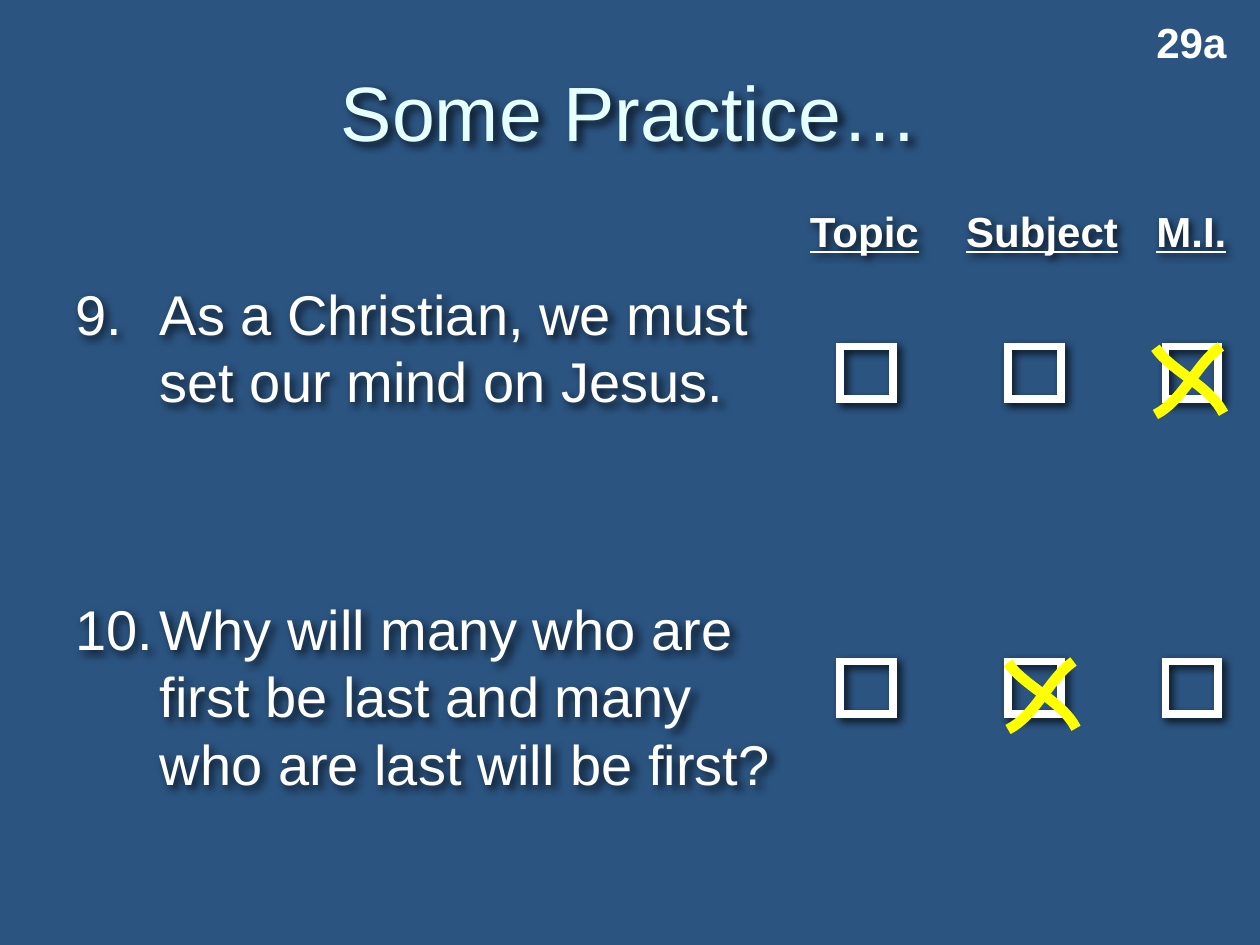
"""Build the "Some Practice…" slide with two questions and their checkboxes."""
from lxml.etree import SubElement
from pptx import Presentation
from pptx.dml.color import RGBColor
from pptx.enum.shapes import MSO_SHAPE
from pptx.enum.text import MSO_ANCHOR, PP_ALIGN
from pptx.oxml.ns import qn
from pptx.util import Inches, Pt

COLORS = {"bg": "2B5481", "title": "E5FFFF", "white": "FFFFFF", "mark": "FFFF00", "shadow": "000000"}
HEADINGS = [("Topic", 6.33, 1.58, 1.15), ("Subject", 7.57, 1.58, 1.48),
            ("M.I.", 9.08, 1.58, 0.8), ("29a", 9.08, 0.08, 0.8)]
QUESTIONS = [
    ("9.\tAs a Christian, we must set our mind on Jesus.", 2.17, 5.67, 2.75, 9.17),
    ("10.\tWhy will many who are first be last and many who are last will be first?", 4.67, 5.92, 5.25, 8),
]
BOX_LEFTS = [6.67, 8, 9.25]
STROKES = [[(0, 0), (0.13, 0.19), (0.43, 0.3), (0.54, 0.52)],
           [(0.52, -0.01), (0.33, 0.12), (0.22, 0.42), (0, 0.53)]]


def add_shadow(sp):
    sp.fill.background()
    sp.shadow.inherit = False
    effects = sp._element.spPr.find(qn("a:effectLst"))
    shadow = SubElement(effects, qn("a:outerShdw"), blurRad=str(Pt(5)), dist=str(Pt(2.8)),
                        dir="2700000", algn="tl", rotWithShape="0")
    color = SubElement(shadow, qn("a:srgbClr"), val=COLORS["shadow"])
    SubElement(color, qn("a:alpha"), val="75000")


def format_run(r, size, color):
    r.font.size = Pt(size)
    r.font.color.rgb = RGBColor.from_string(COLORS[color])
    r.font.name = "Arial"


prs = Presentation()
prs.slide_width, prs.slide_height = Inches(10), Inches(7.5)
s = prs.slides.add_slide(prs.slide_layouts[5])
s.background.fill.solid()
s.background.fill.fore_color.rgb = RGBColor.from_string(COLORS["bg"])

title = s.shapes.title
title.left, title.top, title.width, title.height = Inches(0.5), Inches(0.42), Inches(9), Inches(0.92)
add_shadow(title)
tf = title.text_frame
tf.text = "Some Practice…"
tf.vertical_anchor = MSO_ANCHOR.MIDDLE
p = tf.paragraphs[0]
p.alignment = PP_ALIGN.CENTER
format_run(p.runs[0], 44, "title")

for text, left, top, width in HEADINGS:
    sp = s.shapes.add_textbox(Inches(left), Inches(top), Inches(width), Inches(0.5))
    tf = sp.text_frame
    tf.text = text
    tf.word_wrap = True
    r = tf.paragraphs[0].runs[0]
    format_run(r, 24, "white")
    r.font.bold = True
    if text != "29a":
        r.font.underline = True
        add_shadow(sp)

for text, top, width, box_top, mark_left in QUESTIONS:
    sp = s.shapes.add_textbox(Inches(0.5), Inches(top), Inches(width), Inches(1.83))
    add_shadow(sp)
    tf = sp.text_frame
    tf.text = text
    tf.word_wrap = True
    p = tf.paragraphs[0]
    pPr = p._p.get_or_add_pPr()
    pPr.set("marL", str(Inches(0.67)))
    pPr.set("indent", str(-Inches(0.67)))
    SubElement(SubElement(pPr, qn("a:spcBef")), qn("a:spcPct"), val="20000")
    for r in p.runs:
        format_run(r, 32, "white")

    for left in BOX_LEFTS:
        sp = s.shapes.add_shape(MSO_SHAPE.RECTANGLE, Inches(left), Inches(box_top), Inches(0.42), Inches(0.42))
        sp.line.color.rgb = RGBColor.from_string(COLORS["white"])
        sp.line.width = Pt(4.5)
        SubElement(sp._element.spPr.find(qn("a:ln")), qn("a:miter"), lim="800000")
        add_shadow(sp)

    mark = s.shapes.add_group_shape()
    for stroke in STROKES:
        points = [(Inches(mark_left + x), Inches(box_top + 0.01 + y)) for x, y in stroke]
        builder = mark.shapes.build_freeform(*points[0])
        builder.add_line_segments(points[1:], close=False)
        sp = builder.convert_to_shape()
        segments = sp._element.xpath(".//a:lnTo")
        curve = SubElement(segments[0].getparent(), qn("a:cubicBezTo"))
        for segment in segments:
            curve.append(segment[0])
            segment.getparent().remove(segment)
        sp.fill.background()
        sp.line.color.rgb = RGBColor.from_string(COLORS["mark"])
        sp.line.width = Pt(6)
        sp.shadow.inherit = False

prs.save("out.pptx")
